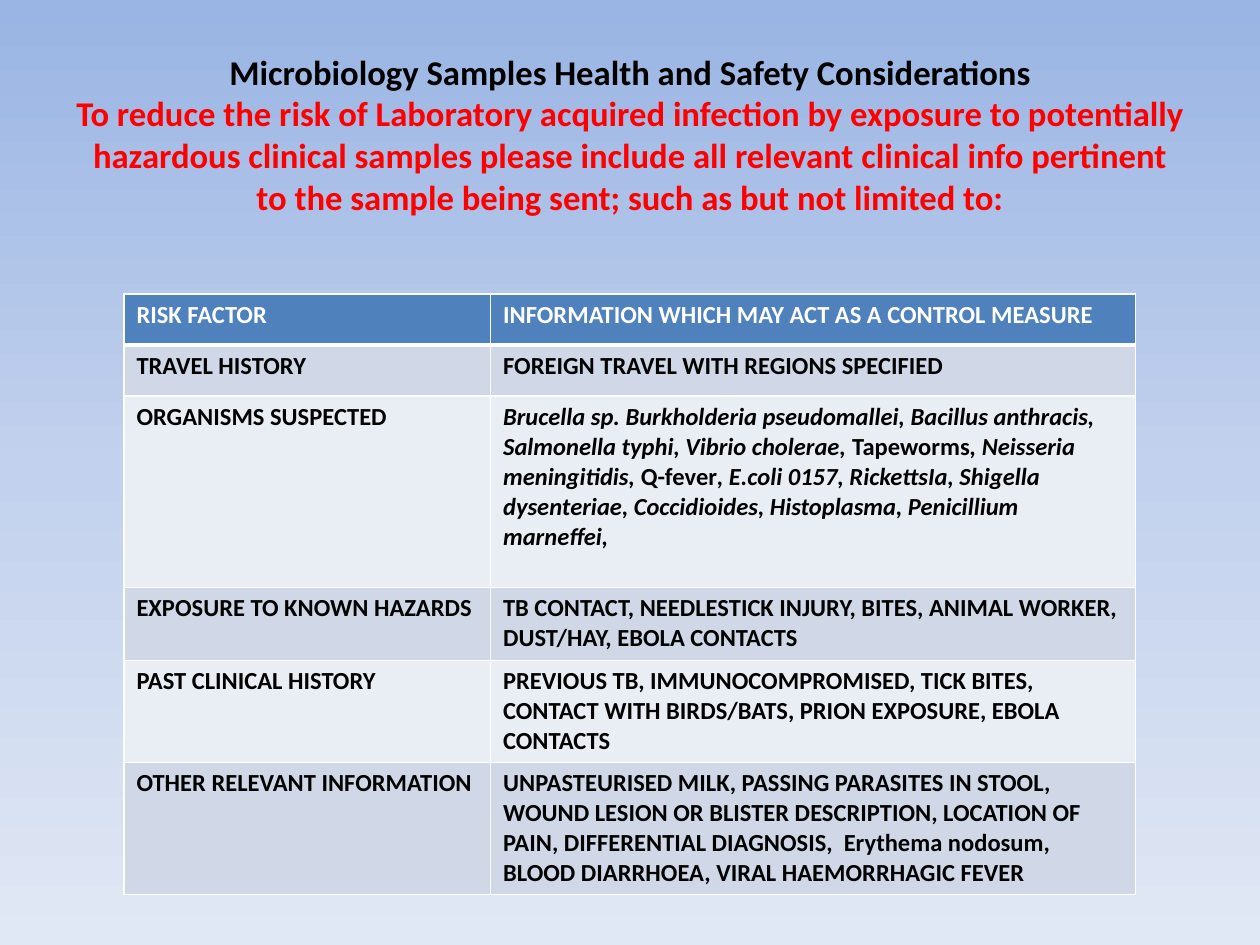
"""Build the microbiology sample safety slide with its risk factor table."""
from copy import deepcopy

from lxml.etree import SubElement
from pptx import Presentation
from pptx.dml.color import RGBColor
from pptx.enum.text import MSO_ANCHOR, MSO_AUTO_SIZE, PP_ALIGN
from pptx.oxml.ns import qn
from pptx.util import Pt

COLORS = {
    "sky_top": "9AB5E4", "sky_middle": "C2D1ED", "sky_bottom": "E1E8F5",
    "black": "000000", "white": "FFFFFF", "warning": "FF0000",
    "header": "4F81BD", "band_dark": "D0D8E8", "band_light": "E9EDF4",
}
COLUMN_WIDTHS = [209.5, 368.6]
ROW_HEIGHTS = [29.2, 29.2, 109.2, 41.7, 58.3, 75.4]
ORGANISMS = [
    ("Brucella sp. Burkholderia pseudomallei, Bacillus anthracis, "
     "Salmonella typhi, Vibrio cholerae, ", True),
    ("Tapeworms", False),
    (", Neisseria meningitidis, ", True),
    ("Q-fever", False),
    (", E.coli 0157, RickettsIa, Shigella dysenteriae, Coccidioides, "
     "Histoplasma, Penicillium marneffei,", True),
]
RISKS = [
    ("RISK FACTOR", "INFORMATION WHICH MAY ACT AS A CONTROL MEASURE"),
    ("TRAVEL HISTORY", "FOREIGN TRAVEL WITH REGIONS SPECIFIED"),
    ("ORGANISMS SUSPECTED", ORGANISMS),
    ("EXPOSURE TO KNOWN HAZARDS",
     "TB CONTACT, NEEDLESTICK INJURY, BITES, ANIMAL WORKER, DUST/HAY, EBOLA CONTACTS"),
    ("PAST CLINICAL HISTORY",
     "PREVIOUS TB, IMMUNOCOMPROMISED, TICK BITES, CONTACT WITH BIRDS/BATS, "
     "PRION EXPOSURE, EBOLA CONTACTS"),
    ("OTHER RELEVANT INFORMATION",
     "UNPASTEURISED MILK, PASSING PARASITES IN STOOL, WOUND LESION OR BLISTER "
     "DESCRIPTION, LOCATION OF PAIN, DIFFERENTIAL DIAGNOSIS,  Erythema nodosum, "
     "BLOOD DIARRHOEA, VIRAL HAEMORRHAGIC FEVER"),
]


class SlideBuilder:
    """Hold the text style and the current slide."""

    def __init__(self, page):
        self.page = page
        self.style = {"name": "Calibri", "bold": True}

    def color(self, name):
        return RGBColor.from_string(COLORS[name])

    def span(self, para, text, color, **values):
        span = para.add_run()
        span.text = text
        span.font.color.rgb = self.color(color)
        for name, value in {**self.style, **values}.items():
            setattr(span.font, name, value)

    def background(self, names):
        fill = self.page.background.fill
        fill.gradient()
        fill.gradient_angle = 270
        stop_list = next(self.page.element.iter(qn("a:gsLst")))
        stop_list.insert(1, deepcopy(stop_list[0]))
        for index, (stop, name) in enumerate(zip(fill.gradient_stops, names)):
            stop.position = index / (len(names) - 1)
            stop.color.rgb = self.color(name)

    def title(self, heading, warning):
        box = self.page.shapes.title
        bounds = {"left": 36, "top": 54.7, "width": 648, "height": 90}
        for name, value in bounds.items():
            setattr(box, name, Pt(value))
        frame = box.text_frame
        layout = {"word_wrap": True, "auto_size": MSO_AUTO_SIZE.NONE,
                  "vertical_anchor": MSO_ANCHOR.MIDDLE, "margin_bottom": Pt(50)}
        for name, value in layout.items():
            setattr(frame, name, value)
        para = frame.paragraphs[0]
        para.alignment = PP_ALIGN.CENTER
        self.span(para, heading, "black", size=Pt(19.8))
        para.add_line_break()
        self.span(para, warning, "warning", size=Pt(19.8))

    def borders(self, cell, widths):
        properties = cell._tc.get_or_add_tcPr()
        for side, width in widths.items():
            line = SubElement(properties, qn(f"a:ln{side}"), w=str(Pt(width)))
            solid = SubElement(line, qn("a:solidFill"))
            SubElement(solid, qn("a:srgbClr"), val=COLORS["white"])

    def cell(self, cell, content, row):
        thick = {0: "B", 1: "T"}.get(row)
        self.borders(cell, {side: 3 if side == thick else 1 for side in "LRTB"})
        band = "band_dark" if row % 2 else "band_light"
        cell.fill.solid()
        cell.fill.fore_color.rgb = self.color(band if row else "header")
        spans = [(content, False)] if isinstance(content, str) else content
        for text, italic in spans:
            self.span(cell.text_frame.paragraphs[0], text,
                      "black" if row else "white", size=Pt(14), italic=italic)

    def table(self, left, top, rows):
        table = self.page.shapes.add_table(
            len(rows), len(COLUMN_WIDTHS), Pt(left), Pt(top),
            Pt(sum(COLUMN_WIDTHS)), Pt(sum(ROW_HEIGHTS))).table
        for column, width in zip(table.columns, COLUMN_WIDTHS):
            column.width = Pt(width)
        for index, (contents, height) in enumerate(zip(rows, ROW_HEIGHTS)):
            table.rows[index].height = Pt(height)
            for position, content in enumerate(contents):
                self.cell(table.cell(index, position), content, index)


def main():
    deck = Presentation()
    deck.slide_width, deck.slide_height = Pt(720), Pt(540)
    builder = SlideBuilder(deck.slides.add_slide(deck.slide_layouts[5]))
    builder.background(["sky_top", "sky_middle", "sky_bottom"])
    builder.title(
        "Microbiology Samples Health and Safety Considerations",
        "To reduce the risk of Laboratory acquired infection by exposure to "
        "potentially hazardous clinical samples please include all relevant "
        "clinical info pertinent to the sample being sent; such as but not limited to:")
    builder.table(70.8, 168, RISKS)
    deck.save("out.pptx")


if __name__ == "__main__":
    main()
